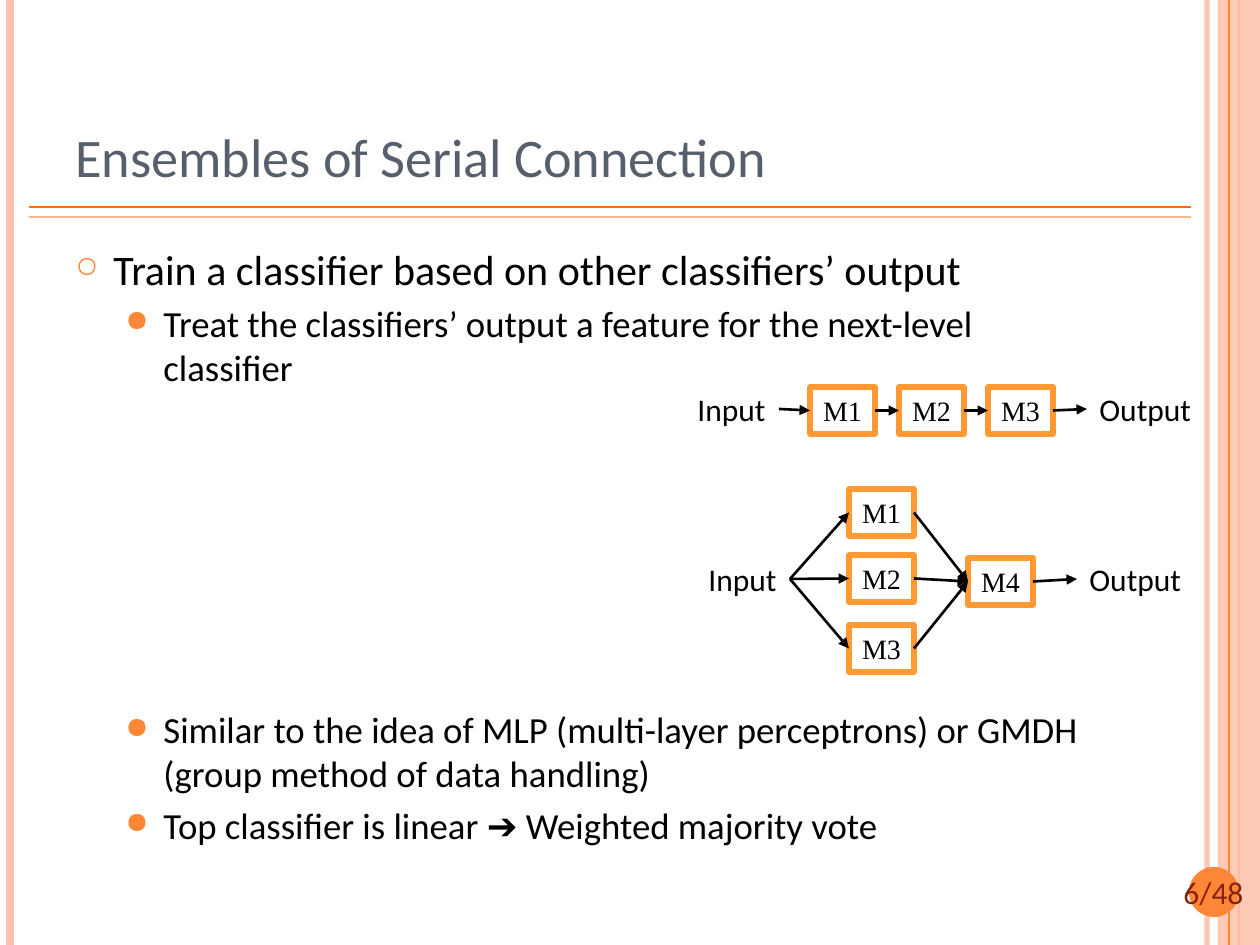
from lxml.etree import SubElement
from pptx import Presentation
from pptx.dml.color import RGBColor
from pptx.enum.shapes import MSO_CONNECTOR, MSO_SHAPE
from pptx.enum.text import MSO_ANCHOR, PP_ALIGN
from pptx.oxml.ns import qn
from pptx.util import Emu, Pt

ORANGE = "FE8637"
PEACH = "FEC3AE"
BLACK = "000000"
LEFT_SIDE, RIGHT_SIDE = 1, 3
MODEL_WIDTH, MODEL_HEIGHT = 65, 47
LABEL_HEIGHT = 50
INPUT_WIDTH, OUTPUT_WIDTH = 94, 118


def px(length):
    return Emu(round(length * 914400 / 126))


def color(hex_string):
    return RGBColor.from_string(hex_string)


def set_alpha(properties, percent):
    for rgb in properties.iter(qn("a:srgbClr")):
        SubElement(rgb, qn("a:alpha"), val=str(percent * 1000))


def format_runs(paragraph, size, hex_string, font_name="Calibri"):
    for run in paragraph.runs:
        run.font.size = Pt(size)
        run.font.name = font_name
        run.font.color.rgb = color(hex_string)


def add_text(slide, box, text, size, hex_string, align=PP_ALIGN.LEFT, wrap=False):
    shape = slide.shapes.add_textbox(*map(px, box))
    text_frame = shape.text_frame
    text_frame.text = text
    text_frame.word_wrap = wrap
    paragraph = text_frame.paragraphs[0]
    paragraph.alignment = align
    format_runs(paragraph, size, hex_string)
    return shape


def add_filled(slide, preset, box, fill):
    shape = slide.shapes.add_shape(preset, *map(px, box))
    shape.shadow.inherit = False
    shape.fill.solid()
    shape.fill.fore_color.rgb = color(fill)
    shape.line.fill.background()
    return shape


def add_line(slide, start, end, hex_string, width):
    line = slide.shapes.add_connector(MSO_CONNECTOR.STRAIGHT, *map(px, start + end))
    line.line.color.rgb = color(hex_string)
    line.line.width = Pt(width)
    SubElement(line._element.spPr, qn("a:effectLst"))
    return line


def add_arrow(slide, source, target):
    arrow = add_line(slide, (0, 0), (0, 0), BLACK, 1.5)
    arrow.begin_connect(source, RIGHT_SIDE)
    arrow.end_connect(target, LEFT_SIDE)
    SubElement(arrow.line._get_or_add_ln(), qn("a:tailEnd"), type="triangle")


def add_model(slide, left, top, name):
    box = (left, top, MODEL_WIDTH, MODEL_HEIGHT)
    shape = add_filled(slide, MSO_SHAPE.RECTANGLE, box, "FFFFFF")
    shape.line.color.rgb = color("FF9933")
    shape.line.width = Pt(3)
    text_frame = shape.text_frame
    text_frame.text = name
    text_frame.word_wrap = False
    text_frame.paragraphs[0].alignment = PP_ALIGN.CENTER
    format_runs(text_frame.paragraphs[0], 16, BLACK, "Times New Roman")
    return shape


def add_label(slide, left, top, width, text):
    return add_text(slide, (left, top, width, LABEL_HEIGHT), text, 18, BLACK)


def add_frame(slide, box):
    left, top, width, height = box
    bottom = top + height

    def add_vertical(x, hex_string, line_width):
        return add_line(slide, (left + x, top), (left + x, bottom), hex_string, line_width)

    inner = add_vertical(1207, PEACH, 3)
    set_alpha(inner.line._get_or_add_ln(), 93)
    add_vertical(10, PEACH, 4.5)
    add_vertical(1239, ORANGE, 1.5)
    band = add_filled(slide, MSO_SHAPE.RECTANGLE, (left + 1218, top, 42, height), PEACH)
    set_alpha(band._element.spPr, 87)
    add_vertical(1229, ORANGE, 0.75)
    for y, hex_string in ((207, "FF6B0A"), (217, "FEB687")):
        add_line(slide, (left + 29, top + y), (left + 1191, top + y), hex_string, 1)


def add_page_number(slide, box):
    left, top, width, height = box
    circle = (left + 32, top, height, height)
    add_filled(slide, MSO_SHAPE.OVAL, circle, ORANGE)
    add_text(slide, box, "6/48", 18, "862110", PP_ALIGN.CENTER, True)


def add_title(slide, box):
    title = add_text(slide, box, "Ensembles of Serial Connection", 31, "575F6D", wrap=True)
    title.text_frame.vertical_anchor = MSO_ANCHOR.BOTTOM


def add_bullets(slide, box, items):
    shape = slide.shapes.add_textbox(*map(px, box))
    text_frame = shape.text_frame
    text_frame.word_wrap = True
    for index, (level, text) in enumerate(items):
        paragraph = text_frame.add_paragraph() if index else text_frame.paragraphs[0]
        paragraph.text = text
        paragraph.level = level
        indent, size, character, percent = ((38, 24, "○", 70), (88, 21, "●", 80))[level]
        properties = paragraph._p.get_or_add_pPr()
        properties.set("marL", str(px(indent)))
        properties.set("indent", str(px(-38)))
        bullet_color = SubElement(properties, qn("a:buClr"))
        SubElement(bullet_color, qn("a:srgbClr"), val=ORANGE)
        SubElement(properties, qn("a:buSzPct"), val=str(percent * 1000))
        SubElement(properties, qn("a:buChar"), char=character)
        if index:
            paragraph.space_before = Pt(4.2)
        format_runs(paragraph, size, BLACK)


def add_serial_diagram(slide, left, top):
    chain = [add_label(slide, left, top, INPUT_WIDTH, "Input")]
    for index in range(3):
        chain.append(add_model(slide, left + 125 + 89 * index, top + 3, f"M{index + 1}"))
    chain.append(add_label(slide, left + 402, top, OUTPUT_WIDTH, "Output"))
    for source, target in zip(chain, chain[1:]):
        add_arrow(slide, source, target)


def add_layered_diagram(slide, left, top):
    input_label = add_label(slide, left, top + 65, INPUT_WIDTH, "Input")
    output_label = add_label(slide, left + 381, top + 65, OUTPUT_WIDTH, "Output")
    combiner = add_model(slide, left + 272, top + 69, "M4")
    for number, offset in enumerate((0, 66, 136), 1):
        model = add_model(slide, left + 153, top + offset, f"M{number}")
        add_arrow(slide, input_label, model)
        add_arrow(slide, model, combiner)
    add_arrow(slide, combiner, output_label)


def main():
    presentation = Presentation()
    presentation.slide_width = px(1260)
    presentation.slide_height = px(945)
    slide = presentation.slides.add_slide(presentation.slide_layouts[6])
    add_frame(slide, (0, 0, 1260, 945))
    add_page_number(slide, (1157, 867, 113, 50))
    add_title(slide, (63, 38, 1029, 157))
    add_bullets(slide, (63, 237, 1029, 160), [
        (0, "Train a classifier based on other classifiers’ output"),
        (1, "Treat the classifiers’ output a feature for the next-level classifier"),
    ])
    add_bullets(slide, (63, 701, 1029, 191), [
        (1, "Similar to the idea of MLP (multi-layer perceptrons) or GMDH (group method of data handling)"),
        (1, "Top classifier is linear ➔ Weighted majority vote"),
    ])
    add_serial_diagram(slide, 685, 384)
    add_layered_diagram(slide, 696, 489)
    presentation.save("out.pptx")


if __name__ == "__main__":
    main()
